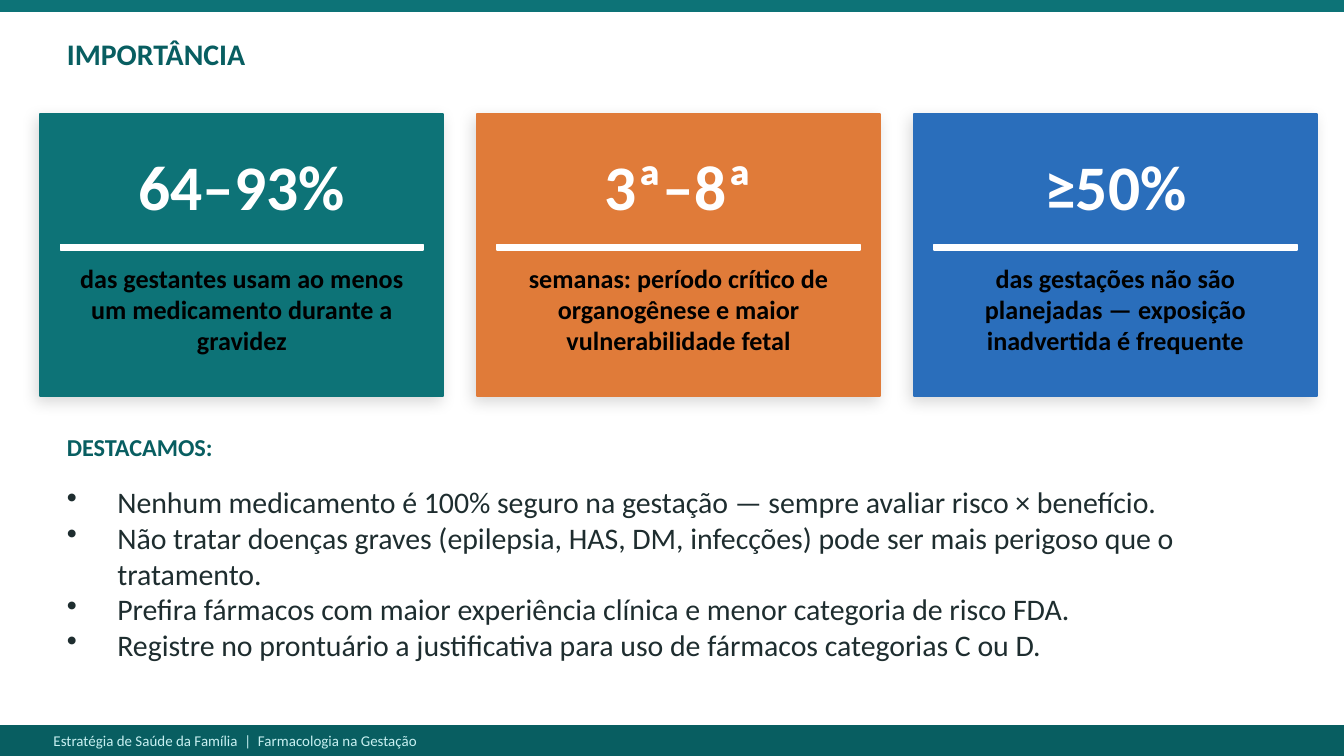
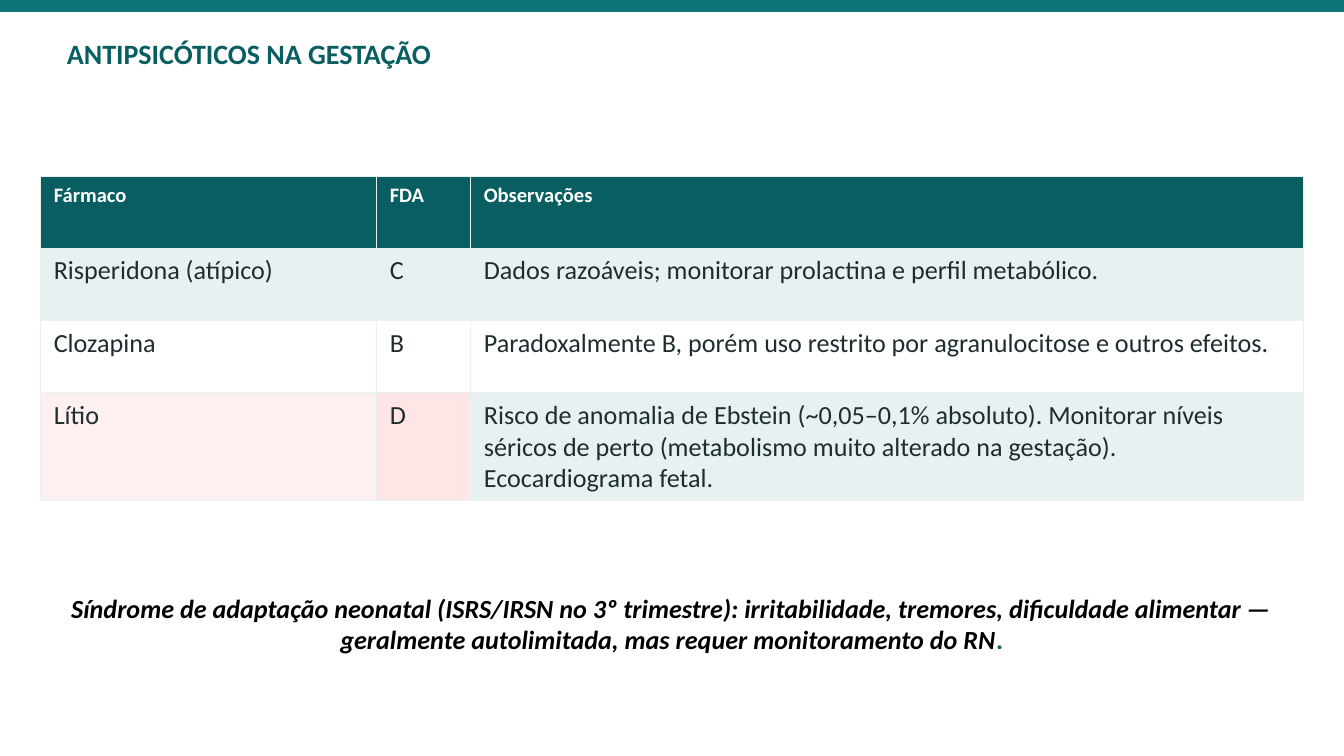
from pptx import Presentation
from pptx.dml.color import RGBColor
from pptx.enum.shapes import MSO_SHAPE
from pptx.enum.text import MSO_ANCHOR, PP_ALIGN
from pptx.oxml import parse_xml
from pptx.oxml.ns import nsdecls
from pptx.util import Pt

PX = 9144
RECT = MSO_SHAPE.RECTANGLE
TOP, MID = MSO_ANCHOR.TOP, MSO_ANCHOR.MIDDLE
LEFT, MIDDLE = PP_ALIGN.LEFT, PP_ALIGN.CENTER
FONT = "Calibri"
TEAL, DEEP, PALE, MINT = "0D7377", "085E61", "E8F0F1", "C8F0F1"
INK, BLACK, WHITE = "1E2D2F", "000000", "FFFFFF"
rgb = RGBColor.from_string


def block(slide, at, color):
    shape = slide.shapes.add_shape(RECT, *[n * PX for n in at])
    shape.shadow.inherit = False
    shape.fill.solid()
    shape.fill.fore_color.rgb = rgb(color)
    shape.line.color.rgb = rgb(color)
    shape.line.width = Pt(1)
    return shape


def write(slide, at, lines, size, color, bold=True, align=LEFT, anchor=MID, bullet=False):
    frame = slide.shapes.add_textbox(*[n * PX for n in at]).text_frame
    frame.word_wrap = True
    frame.vertical_anchor = anchor
    frame.text = "\n".join(lines)
    for para in frame.paragraphs:
        para.alignment = align
        if bullet:
            props = para._p.get_or_add_pPr()
            props.set("marL", str(Pt(27)))
            props.set("indent", str(-Pt(27)))
            props.append(parse_xml(f'<a:buSzPct {nsdecls("a")} val="100000"/>'))
            props.append(parse_xml(f'<a:buChar {nsdecls("a")} char="•"/>'))
        para.font.name = FONT
        para.font.size = Pt(size)
        para.font.bold = bold
        para.font.color.rgb = rgb(color)
    return frame


deck = Presentation()
deck.slide_width, deck.slide_height = 1000 * PX, 5143500
pages = []
for title, size in [("IMPORTÂNCIA", 16), ("ANTIPSICÓTICOS NA GESTAÇÃO", 15)]:
    page = deck.slides.add_slide(deck.slide_layouts[6])
    block(page, (0, 0, 1000, 8), TEAL)
    write(page, (40, 15, 920, 50), [title], size, DEEP)
    pages.append(page)
facts, drugs = pages

block(facts, (0, 540, 1000, 22), DEEP)
write(facts, (30, 541, 940, 20), ["Estratégia de Saúde da Família  |  Farmacologia na Gestação"], 8, MINT, False)

cards = [
    ("64–93%", "das gestantes usam ao menos um medicamento durante a gravidez", TEAL),
    ("3ª–8ª", "semanas: período crítico de organogênese e maior vulnerabilidade fetal", "E07B39"),
    ("≥50%", "das gestações não são planejadas — exposição inadvertida é frequente", "2A6EBB"),
]
for i, (value, note, color) in enumerate(cards):
    x = 30 + 325 * i
    card = block(facts, (x, 85, 300, 210), color)
    effect = card._element.spPr.find("{*}effectLst")
    effect.append(parse_xml(
        f'<a:outerShdw {nsdecls("a")} blurRad="{Pt(8)}" dist="{Pt(3)}" dir="8100000" algn="bl" rotWithShape="0">'
        f'<a:srgbClr val="{BLACK}"><a:alpha val="15000"/></a:srgbClr></a:outerShdw>'))
    write(facts, (x, 95, 300, 85), [value], 34, WHITE, align=MIDDLE)
    block(facts, (x + 15, 182, 270, 4), WHITE)
    write(facts, (x + 10, 190, 280, 90), [note], 14, BLACK, align=MIDDLE, anchor=TOP)

write(facts, (40, 315, 920, 35), ["DESTACAMOS:"], 13, DEEP)
points = [
    "Nenhum medicamento é 100% seguro na gestação — sempre avaliar risco × benefício.",
    "Não tratar doenças graves (epilepsia, HAS, DM, infecções) pode ser mais perigoso que o tratamento.",
    "Prefira fármacos com maior experiência clínica e menor categoria de risco FDA.",
    "Registre no prontuário a justificativa para uso de fármacos categorias C ou D.",
]
write(facts, (40, 355, 920, 160), points, 16, INK, False, anchor=TOP, bullet=True)

rows = [
    ("Fármaco", "FDA", "Observações"),
    ("Risperidona (atípico)", "C", "Dados razoáveis; monitorar prolactina e perfil metabólico."),
    ("Clozapina", "B", "Paradoxalmente B, porém uso restrito por agranulocitose e outros efeitos."),
    ("Lítio", "D", "Risco de anomalia de Ebstein (~0,05–0,1% absoluto). Monitorar níveis séricos de perto "
                   "(metabolismo muito alterado na gestação). Ecocardiograma fetal."),
]
fills = [[DEEP] * 3, [PALE] * 3, [WHITE] * 3, ["FFF0F0", "FFE5E5", PALE]]
grid = drugs.shapes.add_table(4, 3, 30 * PX, 131 * PX, 940 * PX, 215 * PX).table
for col, width in zip(grid.columns, (250, 70, 620)):
    col.width = width * PX
for r, row in enumerate(rows):
    grid.rows[r].height = 215 * PX // 4
    for c, text in enumerate(row):
        cell = grid.cell(r, c)
        cell.text = text
        props = cell._tc.get_or_add_tcPr()
        for side in "LRTB":
            props.append(parse_xml(
                f'<a:ln{side} {nsdecls("a")} w="{Pt(0.5)}"><a:solidFill>'
                f'<a:srgbClr val="{PALE}"/></a:solidFill></a:ln{side}>'))
        cell.fill.solid()
        cell.fill.fore_color.rgb = rgb(fills[r][c])
        font = cell.text_frame.paragraphs[0].font
        font.name = FONT
        font.size = Pt(14 if r else 11)
        font.bold = r == 0
        font.color.rgb = rgb(INK if r else WHITE)

alert = ("Síndrome de adaptação neonatal (ISRS/IRSN no 3º trimestre): irritabilidade, tremores, "
         "dificuldade alimentar — geralmente autolimitada, mas requer monitoramento do RN")
para = write(drugs, (40, 453, 920, 22), [alert], 14, BLACK, align=MIDDLE).paragraphs[0]
para.font.italic = True
dot = para.add_run()
dot.text = "."
dot.font.color.rgb = rgb(DEEP)

deck.save("out.pptx")
